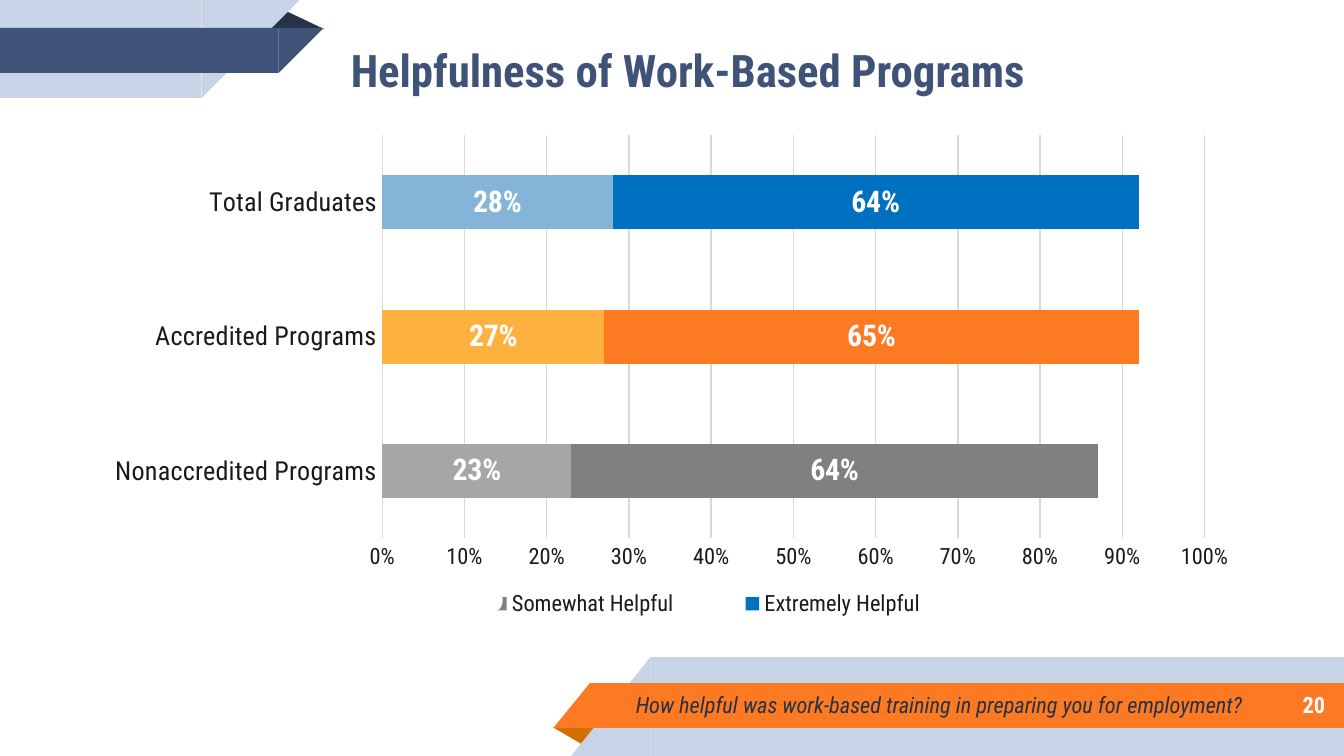
import pptx
import pptx.chart.data
import pptx.dml.color
import pptx.enum.chart
import pptx.enum.shapes
import pptx.enum.text
import pptx.oxml
import pptx.oxml.ns
import pptx.util
from dataclasses import dataclass

Pt = pptx.util.Pt
Kind = pptx.enum.shapes.MSO_SHAPE
Align = pptx.enum.text.PP_ALIGN


@dataclass(frozen=True)
class Theme:
    face: str = "Roboto Condensed"
    navy: str = "3F5378"
    ink: str = "263248"
    pale: str = "C7D3E6"
    orange: str = "FD7A22"
    rust: str = "D26F00"
    white: str = "FFFFFF"
    text: str = "1A1A1A"
    rule: str = "D9D9D9"
    gray: str = "808080"
    silver: str = "A6A6A6"
    amber: str = "FFB13F"
    sky: str = "85B4D9"
    blue: str = "0070C0"
    title: int = 24
    value: int = 16
    label: int = 14
    small: int = 12


def paint(fill, color):
    fill.solid()
    fill.fore_color.rgb = pptx.dml.color.RGBColor.from_string(color)


def place(part, x, y, w, h, first):
    """Give a chart part a manual layout, in fractions of the chart."""
    old = part.find(pptx.oxml.ns.qn("c:layout"))
    if old is not None:
        part.remove(old)
    inner = '<c:layoutTarget val="inner"/>' if first else ""
    modes = "".join(f'<c:{a}Mode val="edge"/>' for a in "xy")
    sizes = "".join(f'<c:{a} val="{v}"/>' for a, v in zip("xywh", (x, y, w, h)))
    node = pptx.oxml.parse_xml(
        f'<c:layout {pptx.oxml.ns.nsdecls("c")}><c:manualLayout>'
        f"{inner}{modes}{sizes}</c:manualLayout></c:layout>")
    if first:
        part.insert(0, node)
    else:
        part.find(pptx.oxml.ns.qn("c:legendPos")).addnext(node)


class Deck:
    def __init__(self, theme):
        self.theme = theme
        self.file = pptx.Presentation()
        self.file.slide_width, self.file.slide_height = Pt(720), Pt(405)
        self.slide = self.file.slides.add_slide(self.file.slide_layouts[5])

    def font(self, font, size, color, bold=False, italic=False):
        font.name, font.size = self.theme.face, Pt(size)
        font.bold, font.italic = bold, italic
        paint(font.fill, color)

    def shape(self, kind, box, color, turn=0, flip=False, peak=None):
        shape = self.slide.shapes.add_shape(kind, *map(Pt, box))
        shape.shadow.inherit = False
        paint(shape.fill, color)
        shape.line.fill.background()
        shape.rotation = turn
        if flip:
            shape._element.spPr.get_or_add_xfrm().set("flipH", "1")
        if peak is not None:
            shape.adjustments[0] = peak

    def fit(self, shape, box, text, size, color, align=Align.LEFT, **style):
        shape.left, shape.top, shape.width, shape.height = map(Pt, box)
        frame = shape.text_frame
        frame.word_wrap = True
        frame.auto_size = pptx.enum.text.MSO_AUTO_SIZE.NONE
        frame.vertical_anchor = pptx.enum.text.MSO_ANCHOR.MIDDLE
        frame.margin_left = frame.margin_right = Pt(7.2)
        frame.margin_top = frame.margin_bottom = Pt(7.2)
        frame.text = text
        line = frame.paragraphs[0]
        line.alignment = align
        self.font(line.font, size, color, **style)

    def title(self, box, text):
        self.fit(self.slide.shapes.title, box, text,
                 self.theme.title, self.theme.navy, bold=True)

    def text(self, box, text, color, **style):
        shape = self.slide.shapes.add_textbox(*map(Pt, box))
        self.fit(shape, box, text, self.theme.small, color, **style)

    def chart(self, box, cats, rows):
        """Draw stacked bars; each row is name, values, color, point colors."""
        look, enum = self.theme, pptx.enum.chart
        data = pptx.chart.data.CategoryChartData(number_format="0%")
        data.categories = cats
        for name, vals, *_ in rows:
            data.add_series(name, vals)
        chart = self.slide.shapes.add_chart(
            enum.XL_CHART_TYPE.BAR_STACKED, *map(Pt, box), data).chart
        chart.has_title = False
        self.font(chart.font, look.small, look.text)

        plot = chart.plots[0]
        plot.gap_width, plot.overlap = 150, 100
        plot.vary_by_categories = False
        for series, (_, _, color, points) in zip(plot.series, rows):
            paint(series.format.fill, color)
            for i, tint in enumerate(points):
                paint(series.points[i].format.fill, tint)
            labels = series.data_labels
            labels.show_value = True
            labels.number_format = "0%"
            labels.number_format_is_linked = False
            labels.position = enum.XL_LABEL_POSITION.CENTER
            self.font(labels.font, look.value, look.white, bold=True)

        cat, val = chart.category_axis, chart.value_axis
        for axis, size in ((cat, look.label), (val, look.small)):
            axis.major_tick_mark = enum.XL_TICK_MARK.NONE
            axis.minor_tick_mark = enum.XL_TICK_MARK.NONE
            self.font(axis.tick_labels.font, size, look.text)
        val.minimum_scale, val.maximum_scale, val.major_unit = 0, 1, 0.1
        val.tick_labels.number_format = "0%"
        val.tick_labels.number_format_is_linked = False
        val.format.line.fill.background()
        val.has_major_gridlines = True
        for line in (cat.format.line, val.major_gridlines.format.line):
            line.width = Pt(0.75)
            paint(line.fill, look.rule)

        chart.has_legend = True
        legend = chart.legend
        legend.position = enum.XL_LEGEND_POSITION.BOTTOM
        legend.include_in_layout = False
        self.font(legend.font, look.small, look.text)
        place(plot._element.getparent(), 0.25, 0.02, 0.71, 0.8, True)
        place(legend._element, 0.29, 0.91, 0.48, 0.08, False)


def main():
    look = Theme()
    deck = Deck(look)

    # Lower ribbon, sloping on its left end
    deck.shape(Kind.ISOSCELES_TRIANGLE, (296, 389.5, 25, 10), look.rust,
               turn=180, peak=0.32)
    for edge, slope, top, high, color in (
            (348.5, 42.5, 352, 53, look.pale), (316, 19.5, 366, 24, look.orange)):
        deck.shape(Kind.RECTANGLE, (edge, top, 720 - edge, high), color)
        deck.shape(Kind.RIGHT_TRIANGLE, (edge - slope, top, slope, high), color,
                   flip=True)

    # Upper ribbon, sloping on its right end
    deck.shape(Kind.ISOSCELES_TRIANGLE, (142.5, 5.5, 31, 10), look.ink, peak=0.32)
    for edge, top, high, color in (
            (108, 0, 52.5, look.pale), (149.3, 15, 24, look.navy)):
        deck.shape(Kind.RECTANGLE, (0, top, edge, high), color)
        deck.shape(Kind.RIGHT_TRIANGLE, (edge, top, high, high), color,
                   turn=180, flip=True)

    deck.text((333.5, 365, 350.5, 25),
              "How helpful was work-based training in preparing you for employment?",
              look.ink, italic=True)
    deck.text((600, 365, 117, 25), "20", look.white, align=Align.RIGHT, bold=True)
    deck.title((180.7, 7.5, 466.5, 60), "Helpfulness of Work-Based Programs")
    deck.chart(
        (49.7, 67, 620.5, 270),
        ("Nonaccredited Programs", "Accredited Programs", "Total Graduates"),
        (("Somewhat Helpful", (0.23, 0.27, 0.28), look.gray,
          (look.silver, look.amber, look.sky)),
         ("Extremely Helpful", (0.64, 0.65, 0.64), look.blue,
          (look.gray, look.orange))))
    for left in (370, 260.7):
        deck.shape(Kind.OVAL, (left, 315.5, 8.6, 12), look.white)
    deck.file.save("out.pptx")


if __name__ == "__main__":
    main()
